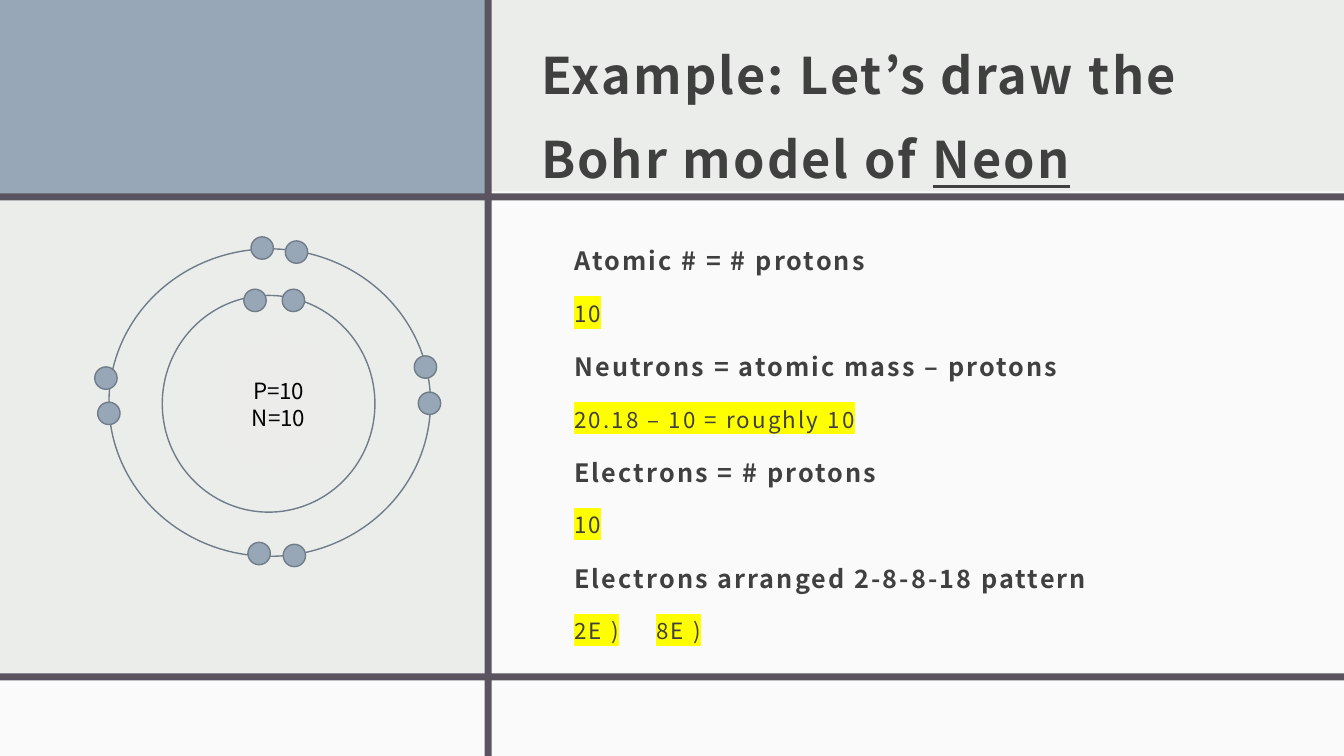
from lxml.etree import SubElement
from pptx import Presentation
from pptx.dml.color import RGBColor
from pptx.enum.shapes import MSO_SHAPE
from pptx.enum.text import MSO_ANCHOR, PP_ALIGN
from pptx.oxml import parse_xml
from pptx.oxml.ns import nsdecls, qn
from pptx.util import Pt

FONT = "Noto Sans CJK JP"
PAPER, BLUE, PLUM, INK = "EBEDEB", "97A7B8", "595460", "404040"
ORBIT_LINE, YELLOW = "707C88", "FFFF00"
color = RGBColor.from_string


def add_figure(kind, left, top, width, height, fill=None, line=None, alpha=None):
    figure = page.shapes.add_shape(kind, Pt(left), Pt(top), Pt(width), Pt(height))
    figure.shadow.inherit = False
    if fill:
        figure.fill.solid()
        figure.fill.fore_color.rgb = color(fill)
    else:
        figure.fill.background()
    if line:
        figure.line.color.rgb = color(line)
        figure.line.width = Pt(1)
    else:
        figure.line.fill.background()
    if alpha:
        fill_color = figure.fill._xPr.find(qn("a:solidFill"))[0]
        SubElement(fill_color, qn("a:alpha")).set("val", str(alpha * 1000))
    return figure


def add_span(para, text, size, ink=INK, bold=False, spacing=150, highlight=None):
    span = para.add_run()
    span.text = text
    span.font.size = Pt(size)
    span.font.bold = bold
    span.font.color.rgb = color(ink)
    span.font.name = FONT
    properties = span.font._element
    properties.set("spc", str(spacing))
    if highlight:
        mark = parse_xml(f'<a:highlight {nsdecls("a")}><a:srgbClr val="{highlight}"/></a:highlight>')
        properties.find(qn("a:latin")).addprevious(mark)
    return span


deck = Presentation()
deck.slide_width, deck.slide_height = Pt(960), Pt(540)
page = deck.slides.add_slide(deck.slide_layouts[6])
page.background.fill.solid()
page.background.fill.fore_color.rgb = color(PAPER)

# Panels
add_figure(MSO_SHAPE.RECTANGLE, 0, 0, 348.5, 141.8, BLUE)
add_figure(MSO_SHAPE.RECTANGLE, 348.5, 136.8, 611.5, 348.5, "FFFFFF", alpha=75)
add_figure(MSO_SHAPE.RECTANGLE, 0, 485.3, 960, 54.7, "FFFFFF", alpha=75)

# Dividing bars
for left, top, width, height in [(0, 138.2, 960, 5), (0, 481, 960, 5), (346.2, 0, 5, 540)]:
    add_figure(MSO_SHAPE.RECTANGLE, left, top, width, height, PLUM)

# Title
box = page.shapes.add_textbox(Pt(379.4), Pt(11.5), Pt(571), Pt(126))
box.text_frame.word_wrap = True
box.text_frame.vertical_anchor = MSO_ANCHOR.MIDDLE
para = box.text_frame.paragraphs[0]
para.line_spacing = 1.4
add_span(para, "Example: Let’s draw the Bohr model of ", 36, bold=True)
add_span(para, "Neon", 36, bold=True).font.underline = True

# Nucleus
nucleus = add_figure(MSO_SHAPE.OVAL, 151.2, 240.5, 95.8, 96.5, "ECEDEB")
frame = nucleus.text_frame
frame.vertical_anchor = MSO_ANCHOR.MIDDLE
for index, count in enumerate(["P=10", "N=10"]):
    para = frame.add_paragraph() if index else frame.paragraphs[0]
    para.alignment = PP_ALIGN.CENTER
    add_span(para, count, 16, "000000", spacing=0)

# Electron shells
add_figure(MSO_SHAPE.OVAL, 115.9, 211, 151.9, 154.8, line=ORBIT_LINE)
add_figure(MSO_SHAPE.OVAL, 77.8, 177.8, 229.7, 219.6, line=ORBIT_LINE)

# Electrons: inner pair, then the outer pairs clockwise from the top
electrons = [
    (174.2, 206.6), (201.6, 206.6),
    (179.3, 169.2), (203.8, 172.1),
    (295.9, 254.2), (298.8, 280.1),
    (202.3, 388.8), (177.1, 387.4),
    (69.8, 287.3), (67.7, 262.1),
]
for left, top in electrons:
    add_figure(MSO_SHAPE.OVAL, left, top, 16, 16, BLUE, ORBIT_LINE)

# Rules and answers
facts = [
    ("Atomic # = # protons", "10"),
    ("Neutrons = atomic mass – protons", "20.18 – 10 = roughly 10"),
    ("Electrons = # protons", "10"),
    ("Electrons arranged 2-8-8-18 pattern", "2E )\t8E )"),
]
box = page.shapes.add_textbox(Pt(403.2), Pt(163.4), Pt(519.8), Pt(316.8))
frame = box.text_frame
frame.word_wrap = True
for index, (rule, answer) in enumerate(facts):
    para = frame.add_paragraph() if index else frame.paragraphs[0]
    para.line_spacing = 1.4
    if index:
        para.space_before = Pt(9.3)
    add_span(para, rule, 18, bold=True)

    para = frame.add_paragraph()
    para.line_spacing = 1.4
    para.space_before = Pt(9.3)
    if "\t" in answer:
        tabs = SubElement(para._p.get_or_add_pPr(), qn("a:tabLst"))
        SubElement(tabs, qn("a:tab"), pos=str(Pt(58.5)), algn="l")
    add_span(para, answer, 16, highlight=YELLOW)

deck.save("out.pptx")
